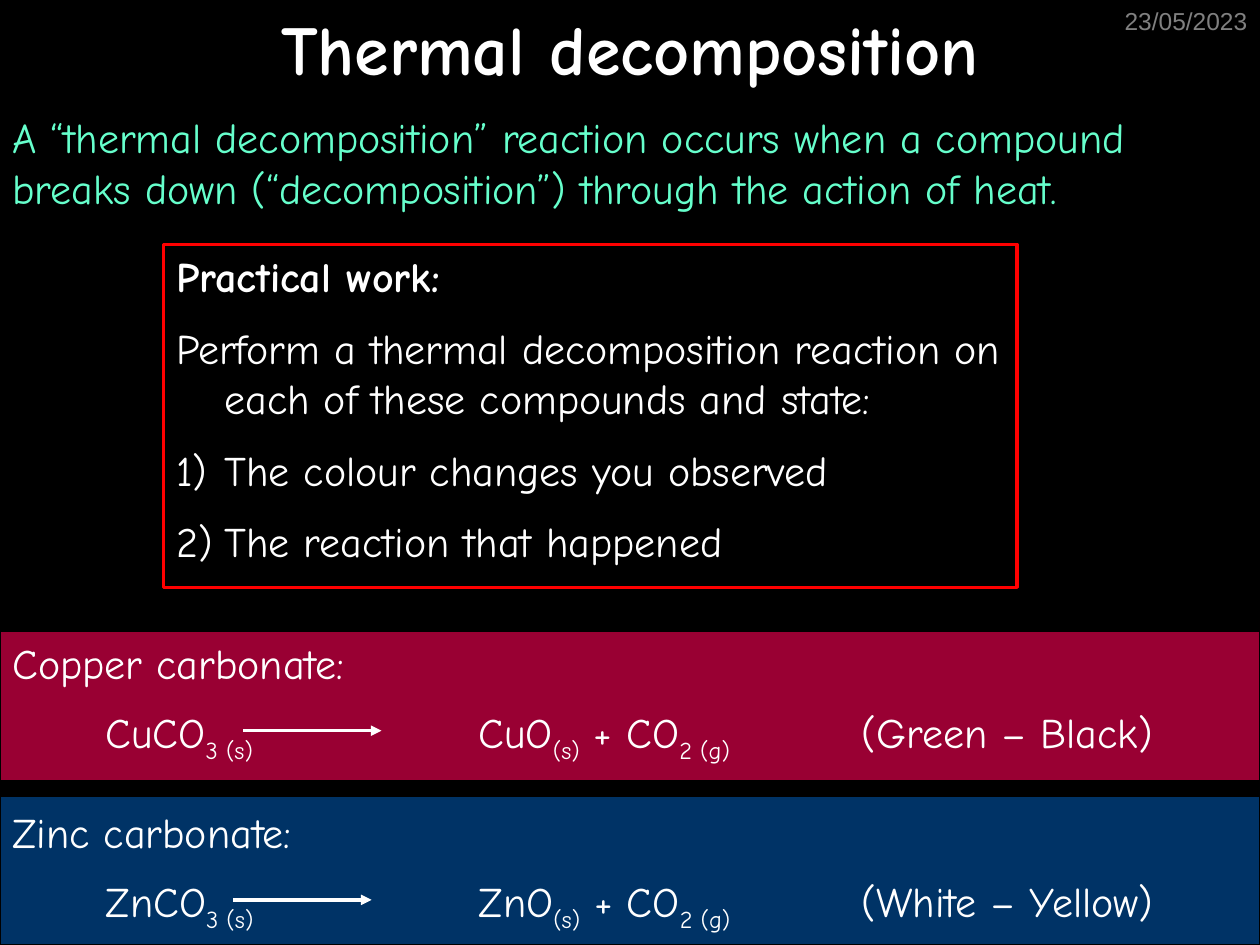
from dataclasses import dataclass
from lxml import etree
from pptx import Presentation
from pptx import util as u
from pptx.dml.color import RGBColor
from pptx.enum import shapes, text
from pptx.oxml import ns

COLOURS = {"background": "000000", "text": "FFFFFF", "date": "808080",
           "definition": "66FFCC", "frame": "FF0000",
           "copper": "990033", "zinc": "003366"}
BODY = {"name": "Comic Neue", "size": u.Pt(24), "bold": False}
BOLD = BODY | {"bold": True}
TITLE = BOLD | {"size": u.Pt(40)}
DATE = {"name": "Arial", "size": u.Pt(14), "bold": False}
SUBSCRIPT = "-25000"
HANGING = u.Cm(0.97)
TAB_STOPS = (u.Cm(7.52), u.Cm(15.24))


@dataclass
class Reaction:
    compound: str
    colour: str
    band_top: float
    label_top: float
    equation_top: float
    arrow_left: float
    arrow_top: float
    formula: list[tuple[str, bool]]


def products(metal: str, change: str) -> list[tuple[str, bool]]:
    return [(f"{metal}CO", False), ("3 (s)", True), (f"\t{metal}O", False),
            ("(s)", True), (" + CO", False), ("2 (g)", True),
            (f"\t({change})", False)]


REACTIONS = [
    Reaction("Copper carbonate:", "copper", 12.73, 12.73, 14.12, 4.9, 14.73,
             products("Cu", "Green – Black")),
    Reaction("Zinc carbonate:", "zinc", 16.05, 16.13, 17.53, 4.7, 18.14,
             products("Zn", "White – Yellow")),
]
TASKS = [("Practical work:", BOLD, False),
         ("Perform a thermal decomposition reaction on each of these "
          "compounds and state:", BODY, False),
         ("The colour changes you observed", BODY, True),
         ("The reaction that happened", BODY, True)]


def rgb(key: str) -> RGBColor:
    return RGBColor.from_string(COLOURS[key])


def add_child(parent, tag: str, **values):
    return etree.SubElement(parent, ns.qn(tag), {k: str(v) for k, v in values.items()})


def add_span(para, words: str, style: dict, colour: str = "text"):
    span = para.add_run()
    span.text = words
    for name, value in style.items():
        setattr(span.font, name, value)
    span.font.color.rgb = rgb(colour)
    return span


def place(box, left: float, top: float, width: float, height: float) -> None:
    for name, value in zip(("left", "top", "width", "height"), (left, top, width, height)):
        setattr(box, name, u.Cm(value))
    box.text_frame.word_wrap = True
    box.text_frame.auto_size = text.MSO_AUTO_SIZE.NONE


def add_text_box(page, left: float, top: float, width: float, height: float):
    box = page.shapes.add_textbox(0, 0, 0, 0)
    place(box, left, top, width, height)
    return box.text_frame.paragraphs[0]


def fill_tasks(box) -> None:
    place(box, 3.3, 4.93, 17.2, 6.91)
    box.fill.background()
    box.line.color.rgb = rgb("frame")
    box.line.width = u.Pt(2)
    for index, (words, style, numbered) in enumerate(TASKS):
        frame = box.text_frame
        para = frame.add_paragraph() if index else frame.paragraphs[0]
        properties = para._p.get_or_add_pPr()
        properties.set("marL", str(HANGING))
        properties.set("indent", str(-HANGING))
        if numbered:
            add_child(properties, "a:buFont", typeface=BODY["name"])
            add_child(properties, "a:buAutoNum", type="arabicParenR")
        else:
            add_child(properties, "a:buNone")
        para.space_before = u.Pt(12 if index else 0)
        add_span(para, words, style)


def add_arrow(page, left: float, top: float) -> None:
    arrow = page.shapes.add_connector(
        shapes.MSO_CONNECTOR.STRAIGHT, u.Cm(left), u.Cm(top), u.Cm(left + 2.79), u.Cm(top))
    arrow.line.color.rgb = rgb("text")
    arrow.line.width = u.Pt(2)
    add_child(arrow.line._get_or_add_ln(), "a:tailEnd", type="triangle")
    add_child(arrow._element.spPr, "a:effectLst")


def add_reaction(page, reaction: Reaction) -> None:
    band = page.shapes.add_shape(
        shapes.MSO_SHAPE.RECTANGLE, 0, u.Cm(reaction.band_top), u.Cm(25.4), u.Cm(3))
    band.shadow.inherit = False
    band.fill.solid()
    band.fill.fore_color.rgb = rgb(reaction.colour)
    band.line.color.rgb = rgb("background")
    band.line.width = u.Pt(0.75)
    add_span(add_text_box(page, 0, reaction.label_top, 19.5, 1.27), reaction.compound, BODY)

    equation = add_text_box(page, 1.88, reaction.equation_top, 23.52, 1.27)
    tabs = add_child(equation._p.get_or_add_pPr(), "a:tabLst")
    for stop in TAB_STOPS:
        add_child(tabs, "a:tab", pos=stop, algn="l")
    for words, lowered in reaction.formula:
        span = add_span(equation, words, BODY)
        if lowered:
            span.font._element.set("baseline", SUBSCRIPT)
    add_arrow(page, reaction.arrow_left, reaction.arrow_top)


def main() -> None:
    deck = Presentation()
    deck.slide_width, deck.slide_height = u.Cm(25.4), u.Cm(19.05)
    page = deck.slides.add_slide(deck.slide_layouts[1])
    page.background.fill.solid()
    page.background.fill.fore_color.rgb = rgb("background")

    date = add_text_box(page, 19.48, 0, 5.92, 1.32)
    date.alignment = text.PP_ALIGN.RIGHT
    add_span(date, "23/05/2023", DATE, "date")

    title = page.shapes.title
    place(title, 0, 0, 25.4, 1.93)
    add_span(title.text_frame.paragraphs[0], "Thermal decomposition", TITLE)

    add_span(add_text_box(page, 0, 2.13, 25.4, 2.29),
             "A “thermal decomposition” reaction occurs when a compound breaks "
             "down (“decomposition”) through the action of heat.", BODY, "definition")
    fill_tasks(page.placeholders[1])
    for reaction in REACTIONS:
        add_reaction(page, reaction)
    deck.save("out.pptx")


if __name__ == "__main__":
    main()
